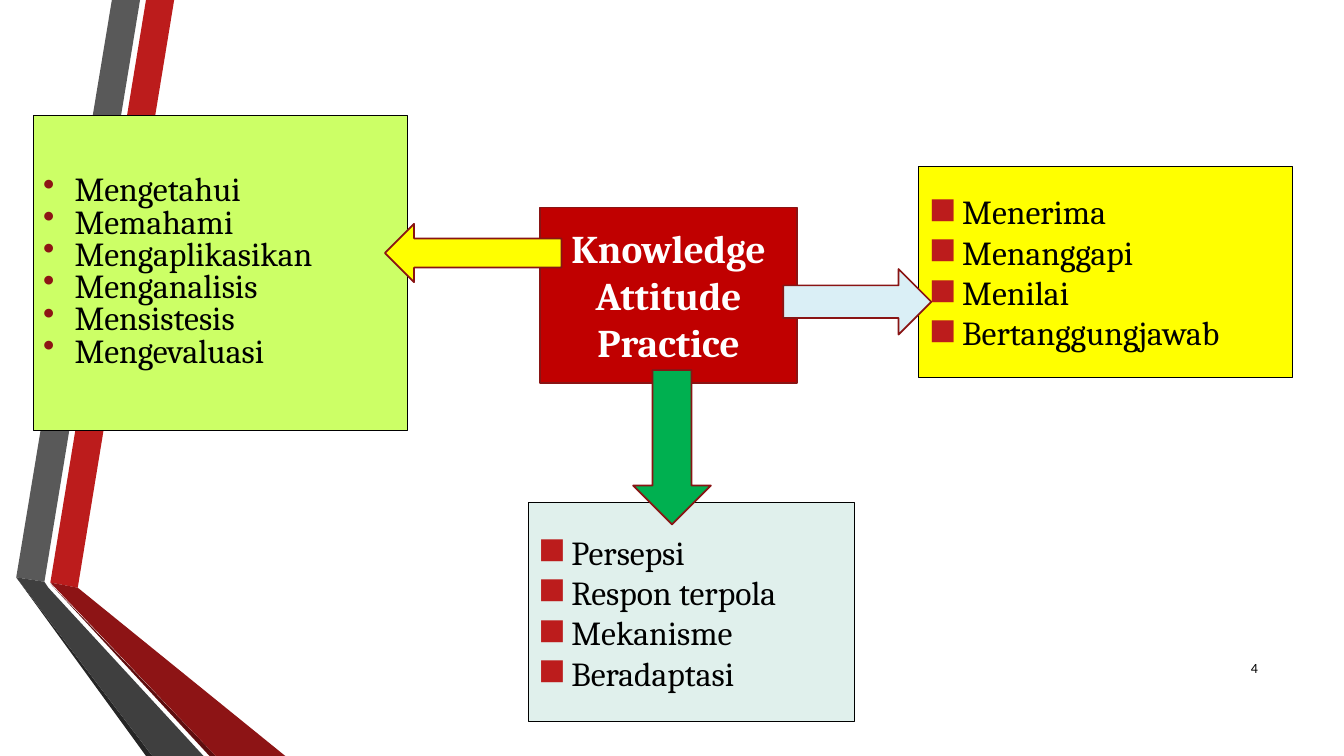
from pptx import Presentation
from pptx.dml.color import RGBColor
from pptx.enum.shapes import MSO_SHAPE as SHAPE
from pptx.enum.text import MSO_ANCHOR as ANCHOR, PP_ALIGN as ALIGN
from pptx.oxml.ns import qn
from pptx.util import Cm, Pt
from lxml.etree import SubElement

COLORS = {
    "red": "BC1C1C", "grey": "595959", "black_grey": "262626", "wine": "5E0D0E",
    "dark_red": "8D1415", "dark_grey": "3F3F3F", "crimson": "C00000",
    "outline": "891414", "lime": "CCFF66", "yellow": "FFFF00", "mint": "E0F0EC",
    "ice": "DAEFF6", "green": "00B050", "black": "000000", "white": "FFFFFF",
}

RIBBONS = [
    ("red", [(1.27, 14.68), (1.96, 14.81), (4.39, 0), (3.68, 0)]),
    ("grey", [(3.53, 0), (2.82, 0), (0.41, 14.55), (1.12, 14.66)]),
    ("black_grey", [(0.41, 14.55), (3.68, 19.05), (3.84, 19.05)]),
    ("wine", [(1.27, 14.71), (5.28, 19.05), (5.44, 19.05)]),
    ("dark_red", [(1.27, 14.68), (5.44, 19.05), (7.19, 19.05), (1.96, 14.81)]),
    ("dark_grey", [(5.13, 19.05), (1.22, 14.81), (1.12, 14.66), (0.41, 14.55), (3.84, 19.05)]),
]

TITLE = dict(size=Pt(28), bold=True, name="Cambria")
ITEM = dict(size=Pt(24), bold=False, name="Cambria")
NUMBER = dict(size=Pt(10), bold=False, name="Calibri")

DOT = dict(char="•", color="dark_red", indent=0.79, spacing=0.8)
SQUARE = dict(char="◼", color="red", indent=0.84, spacing=1.0)

BOXES = [
    (SHAPE.FLOWCHART_PROCESS, (13.61, 5.23, 6.48, 4.42), "crimson", ("outline", 1.25),
     ["Knowledge", "Attitude", "Practice"], TITLE, "white", None),
    (SHAPE.RECTANGLE, (0.84, 2.9, 9.42, 7.95), "lime", ("black", 0.75),
     ["Mengetahui", "Memahami", "Mengaplikasikan", "Menganalisis", "Mensistesis",
      "Mengevaluasi"], ITEM, "black", DOT),
    (SHAPE.RECTANGLE, (23.16, 4.19, 9.42, 5.33), "yellow", ("black", 0.75),
     ["Menerima", "Menanggapi", "Menilai", "Bertanggungjawab"], ITEM, "black", SQUARE),
    (SHAPE.RECTANGLE, (13.31, 12.67, 8.23, 5.51), "mint", ("black", 0.75),
     ["Persepsi", "Respon terpola", "Mekanisme", "Beradaptasi"], ITEM, "black", SQUARE),
]

ARROWS = [
    ((19.74, 6.78, 3.73, 1.65), 0, "ice"),
    ((14.99, 10.29, 3.89, 1.96), 90, "green"),
    ((9.7, 5.64, 4.45, 1.47), 180, "yellow"),
]

PAGE_NUMBER = ("4", (30.43, 16.31, 1.52, 1.02))


def rgb(name):
    return RGBColor.from_string(COLORS[name])


def paint(sp, fill, line=None):
    sp.shadow.inherit = False
    sp.fill.solid()
    sp.fill.fore_color.rgb = rgb(fill)
    if line:
        sp.line.color.rgb = rgb(line[0])
        sp.line.width = Pt(line[1])
    else:
        sp.line.fill.background()


def add_bullet(p, bullet):
    p.line_spacing = bullet["spacing"]
    pPr = p._p.get_or_add_pPr()
    indent = Cm(bullet["indent"])
    pPr.set("marL", str(indent))
    pPr.set("indent", str(-indent))
    clr = SubElement(pPr, qn("a:buClr"))
    SubElement(clr, qn("a:srgbClr"), val=COLORS[bullet["color"]])
    SubElement(pPr, qn("a:buChar"), char=bullet["char"])


def write(sp, lines, font, color, align, bullet=None):
    tf = sp.text_frame
    tf.word_wrap = True
    tf.vertical_anchor = ANCHOR.MIDDLE
    for i, line in enumerate(lines):
        p = tf.paragraphs[0] if i == 0 else tf.add_paragraph()
        p.alignment = align
        if bullet:
            add_bullet(p, bullet)
        r = p.add_run()
        r.text = line
        for key, value in font.items():
            setattr(r.font, key, value)
        r.font.color.rgb = rgb(color)


def main():
    prs = Presentation()
    prs.slide_width, prs.slide_height = Cm(33.87), Cm(19.05)
    s = prs.slides.add_slide(prs.slide_layouts[6])

    for color, points in RIBBONS:
        (x, y), *rest = [(Cm(a), Cm(b)) for a, b in points]
        outline = s.shapes.build_freeform(x, y)
        outline.add_line_segments(rest, close=True)
        paint(outline.convert_to_shape(), color)

    for kind, at, fill, line, lines, font, color, bullet in BOXES:
        sp = s.shapes.add_shape(kind, *map(Cm, at))
        paint(sp, fill, line)
        write(sp, lines, font, color, ALIGN.LEFT if bullet else ALIGN.CENTER, bullet)

    for at, angle, fill in ARROWS:
        sp = s.shapes.add_shape(SHAPE.RIGHT_ARROW, *map(Cm, at))
        sp.rotation = angle
        paint(sp, fill, ("outline", 1.25))

    number, at = PAGE_NUMBER
    write(s.shapes.add_textbox(*map(Cm, at)), [number], NUMBER, "black", ALIGN.RIGHT)

    prs.save("out.pptx")


if __name__ == "__main__":
    main()
